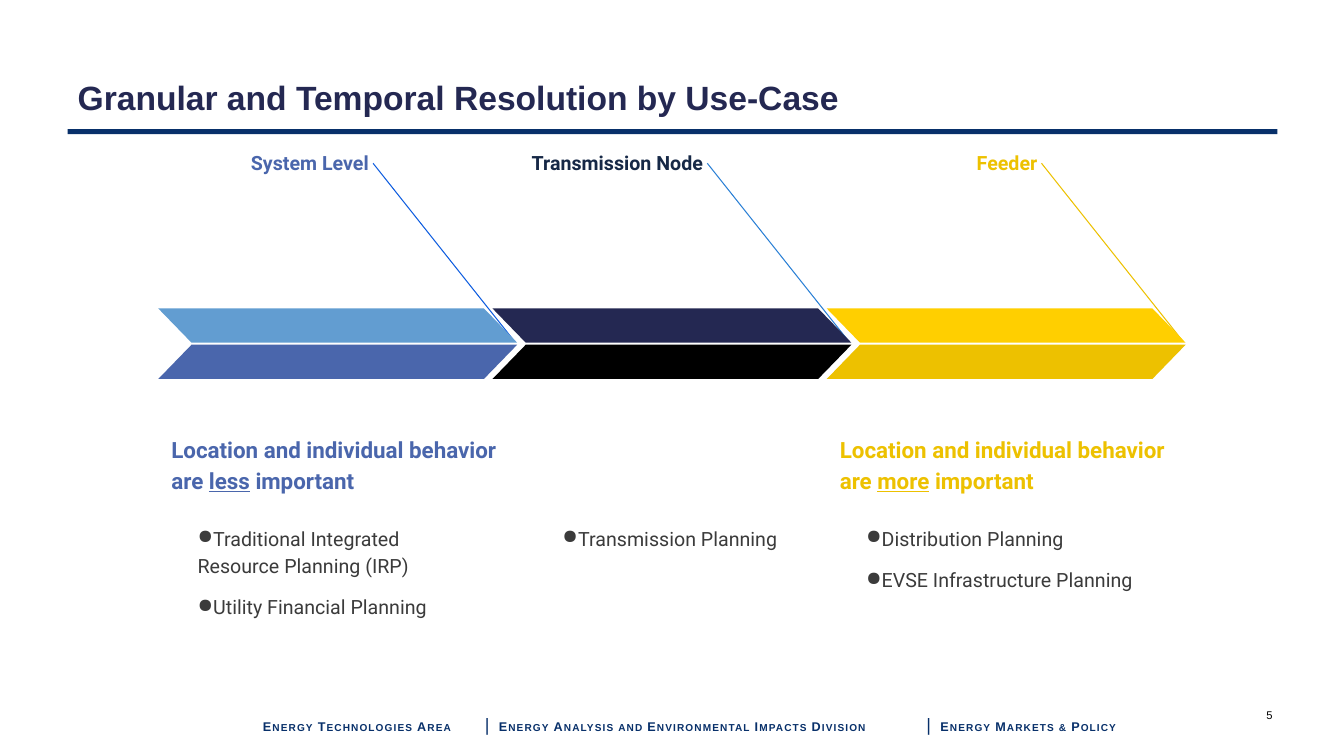
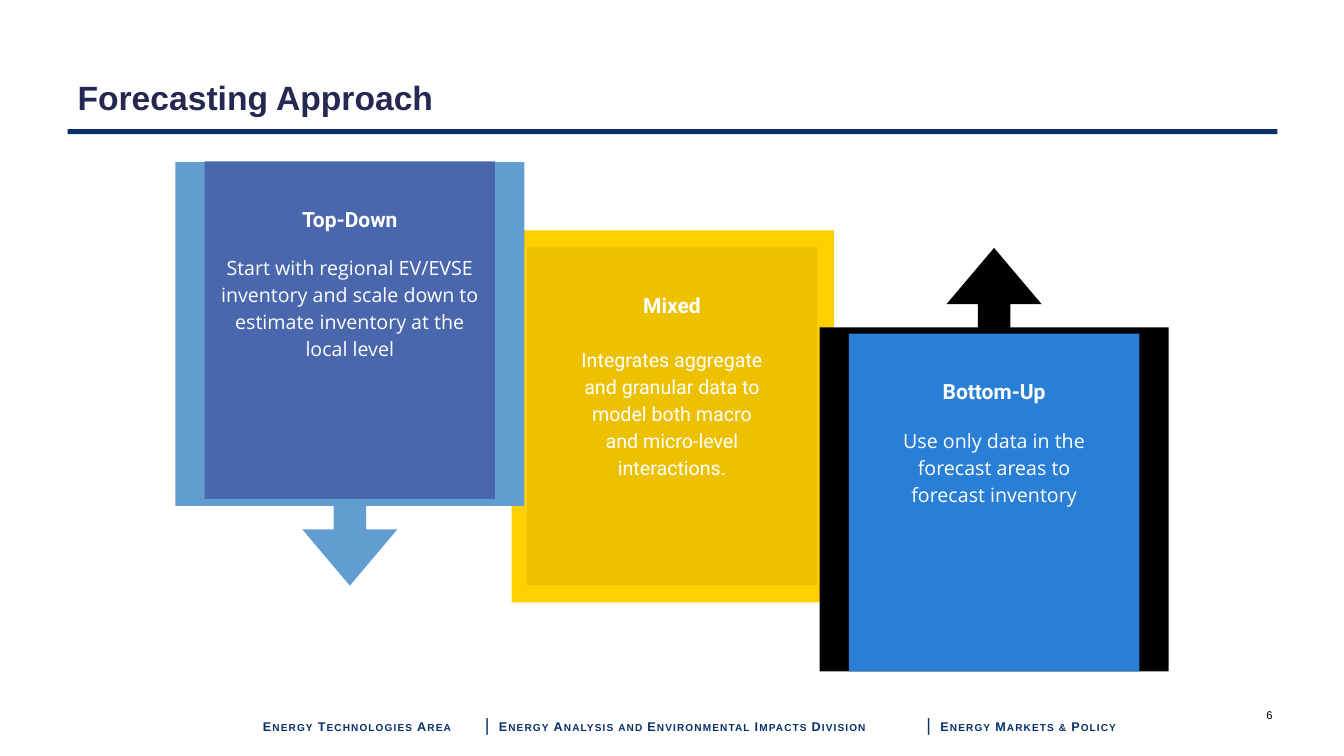
from dataclasses import dataclass

from lxml.etree import SubElement
from pptx import Presentation
from pptx.dml.color import RGBColor
from pptx.enum.shapes import MSO_CONNECTOR, MSO_SHAPE
from pptx.enum.text import MSO_ANCHOR, MSO_AUTO_SIZE, PP_ALIGN
from pptx.oxml.ns import qn
from pptx.util import Inches, Pt


@dataclass(frozen=True)
class Theme:
    band: str = "08306A"
    navy: str = "242852"
    ink: str = "162846"
    body: str = "3B3B3B"
    black: str = "000000"
    white: str = "FFFFFF"
    sky: str = "629DD1"
    indigo: str = "4A66AC"
    azure: str = "297FD5"
    cobalt: str = "0D5CDF"
    yellow: str = "FFCF00"
    gold: str = "EDC100"
    heading_font: str = "Arial"
    body_font: str = "Roboto"
    card_font: str = "Open Sans"
    title_size: float = 24
    headline_size: float = 16
    card_title_size: float = 15
    body_size: float = 14
    footer_size: float = 9
    number_size: float = 8
    line_spacing: float = 1.15
    inset: float = 0.13


@dataclass(frozen=True)
class Box:
    left: float
    top: float
    width: float
    height: float

    def within(self, left, top, width, height):
        """Return a box whose position is given relative to this one."""
        return Box(self.left + left, self.top + top, width, height)

    def lengths(self):
        return [Inches(value) for value in (self.left, self.top, self.width, self.height)]


THEME = Theme()


def add_run(paragraph, text, size, color, font=THEME.body_font, bold=False, underline=None):
    run = paragraph.add_run()
    run.text = text
    run.font.name = font
    run.font.size = Pt(size)
    run.font.bold = bold
    run.font.underline = underline
    run.font.color.rgb = RGBColor.from_string(color)
    return run


def set_frame(shape, anchor=MSO_ANCHOR.TOP, side=THEME.inset, top=THEME.inset):
    frame = shape.text_frame
    frame.word_wrap = True
    frame.auto_size = MSO_AUTO_SIZE.NONE
    frame.vertical_anchor = anchor
    frame.margin_left = frame.margin_right = Inches(side)
    frame.margin_top = frame.margin_bottom = Inches(top)
    return frame


def add_text_box(slide, box, **frame_options):
    shape = slide.shapes.add_textbox(*box.lengths())
    set_frame(shape, **frame_options)
    return shape


def add_filled_shape(slide, kind, box, color, adjustments=()):
    shape = slide.shapes.add_shape(kind, *box.lengths())
    shape.shadow.inherit = False
    shape.fill.solid()
    shape.fill.fore_color.rgb = RGBColor.from_string(color)
    shape.line.fill.background()
    for index, value in enumerate(adjustments):
        shape.adjustments[index] = value
    return shape


def add_band(slide):
    return add_filled_shape(slide, MSO_SHAPE.RECTANGLE, Box(0.67, 1.28, 12, 0.05), THEME.band)


def add_footer(slide):
    shape = add_text_box(slide, Box(2.51, 6.99, 9.3, 0.48), side=0.1, top=0.05)
    paragraph = shape.text_frame.paragraphs[0]
    tabs = SubElement(paragraph._p.get_or_add_pPr(), qn("a:tabLst"))
    for position in (2.2, 2.34, 6.58, 6.72):
        SubElement(tabs, qn("a:tab"), pos=str(Inches(position)), algn="l")
    units = ("Energy Technologies Area", "Energy Analysis and Environmental Impacts Division",
             "Energy Markets & Policy")
    for index, unit in enumerate(units):
        runs = [(unit, THEME.footer_size, True)]
        if index:
            runs.insert(0, ("\t|\t", THEME.headline_size, False))
        for text, size, bold in runs:
            run = add_run(paragraph, text, size, THEME.band, THEME.heading_font, bold)
            run.font._element.set("cap", "small")
            run.font._element.set("spc", "80")
    return shape


def prepare_layout(presentation):
    """Give the title-only layout its title box."""
    layout = presentation.slide_layouts[5]
    title = layout.placeholders[0]
    title.left, title.top, title.width, title.height = Box(0.67, 0.71, 12, 0.5).lengths()
    return layout


def move_to_layout(shapes, layout):
    for shape in shapes:
        layout.shapes.element.append(shape.element)


def add_titled_slide(presentation, layout, title, number):
    slide = presentation.slides.add_slide(layout)
    frame = set_frame(slide.shapes.title, MSO_ANCHOR.BOTTOM, side=0.1, top=0.05)
    frame.paragraphs[0].alignment = PP_ALIGN.LEFT
    add_run(frame.paragraphs[0], title, THEME.title_size, THEME.navy, THEME.heading_font, True)
    number_box = add_text_box(slide, Box(12.22, 6.89, 0.5, 0.4),
                              anchor=MSO_ANCHOR.MIDDLE, side=0.1, top=0.05)
    paragraph = number_box.text_frame.paragraphs[0]
    paragraph.alignment = PP_ALIGN.RIGHT
    add_run(paragraph, str(number), THEME.number_size, THEME.black, THEME.heading_font)
    return slide


def add_stage_label(slide, box, text, color):
    shape = add_text_box(slide, box)
    shape.text_frame.margin_right = Inches(0.04)
    paragraph = shape.text_frame.paragraphs[0]
    paragraph.alignment = PP_ALIGN.RIGHT
    paragraph.line_spacing = THEME.line_spacing
    add_run(paragraph, text, THEME.body_size, color, bold=True)
    return shape


def add_leader(slide, label, end_x, end_y, color):
    """Draw a thin line from the label's right side to the given point."""
    connector = slide.shapes.add_connector(MSO_CONNECTOR.STRAIGHT, 0, 0,
                                           Inches(end_x), Inches(end_y))
    connector.begin_connect(label, 3)
    connector.line.width = Pt(0.75)
    connector.line.color.rgb = RGBColor.from_string(color)
    SubElement(connector.element.spPr, qn("a:effectLst"))


def add_chevron(slide, box, upper_color, lower_color):
    """Stack two mirrored parallelograms into one arrow-like bar."""
    for offset, color in ((0, upper_color), (0.36, lower_color)):
        half = add_filled_shape(slide, MSO_SHAPE.PARALLELOGRAM,
                                box.within(0, offset, box.width, 0.34), color, [0.97])
        if offset == 0:
            half.element.spPr.xfrm.set("flipH", "1")


def add_headline(slide, box, emphasis, color):
    shape = add_text_box(slide, box, anchor=MSO_ANCHOR.BOTTOM)
    paragraph = shape.text_frame.paragraphs[0]
    paragraph.line_spacing = THEME.line_spacing
    for text, underline in (("Location and individual behavior are ", None),
                            (emphasis, True), (" important", None)):
        add_run(paragraph, text, THEME.headline_size, color, bold=True, underline=underline)


def add_bullets(slide, box, items, alignment):
    frame = add_text_box(slide, box).text_frame
    for index, item in enumerate(items):
        paragraph = frame.add_paragraph() if index else frame.paragraphs[0]
        paragraph.alignment = alignment
        paragraph.line_spacing = THEME.line_spacing
        if index:
            paragraph.space_before = Pt(10)
        properties = paragraph._p.get_or_add_pPr()
        properties.set("marL", "0")
        properties.set("indent", str(-Inches(0.1)))
        bullet_color = SubElement(properties, qn("a:buClr"))
        SubElement(bullet_color, qn("a:srgbClr"), val=THEME.body)
        SubElement(properties, qn("a:buChar"), char="●")
        add_run(paragraph, item, THEME.body_size, THEME.body)


@dataclass(frozen=True)
class Stage:
    label: str
    label_color: str
    leader_color: str
    upper_color: str
    lower_color: str
    emphasis: str
    items: tuple
    alignment: PP_ALIGN = PP_ALIGN.LEFT


STAGES = (
    Stage("System Level", THEME.indigo, THEME.cobalt, THEME.sky, THEME.indigo, "less",
          ("Traditional Integrated Resource Planning (IRP)", "Utility Financial Planning")),
    Stage("Transmission Node", THEME.ink, THEME.azure, THEME.navy, THEME.black, "",
          ("Transmission Planning",), PP_ALIGN.CENTER),
    Stage("Feeder", THEME.gold, THEME.gold, THEME.yellow, THEME.gold, "more",
          ("Distribution Planning", "EVSE Infrastructure Planning")),
)


def add_stage(slide, box, stage):
    label = add_stage_label(slide, box.within(0, 0, 2.13, 0.58), stage.label, stage.label_color)
    add_leader(slide, label, box.left + 3.52, box.top + 2.04, stage.leader_color)
    add_chevron(slide, box.within(0, 1.73, box.width, 0.7), stage.upper_color, stage.lower_color)
    if stage.emphasis:
        add_headline(slide, box.within(0, 2.65, box.width, 1.05), stage.emphasis,
                     stage.lower_color)
    add_bullets(slide, box.within(0.26, 3.73, 3, 1.74), stage.items, stage.alignment)


def fill_resolution_slide(slide):
    for index, stage in enumerate(STAGES):
        add_stage(slide, Box(1.57 + 3.315 * index, 1.33, 3.56, 5.47), stage)


@dataclass(frozen=True)
class Card:
    column: int
    title: str
    text: str
    frame_kind: MSO_SHAPE
    frame_offset: tuple
    frame_color: str
    panel_color: str
    side: float = 0.5
    gap: float = 15
    font: str = THEME.card_font


CALLOUT_ADJUSTMENTS = (0.093, 0.136, 0.161, 0.812)
CARDS = (
    Card(1, "Mixed",
         "Integrates aggregate and granular data to model both macro and micro-level interactions.",
         MSO_SHAPE.RECTANGLE, (-0.15, -0.17, 3.2, 3.69), THEME.yellow, THEME.gold,
         gap=19, font=THEME.body_font),
    Card(0, "Top-Down",
         "Start with regional EV/EVSE inventory and scale down to estimate inventory "
         "at the local level",
         MSO_SHAPE.DOWN_ARROW_CALLOUT, (-0.29, 0.01, 3.46, 4.2), THEME.sky, THEME.indigo,
         side=THEME.inset),
    Card(2, "Bottom-Up", "Use only data in the forecast areas to forecast inventory",
         MSO_SHAPE.UP_ARROW_CALLOUT, (-0.29, -0.85, 3.46, 4.2), THEME.black, THEME.azure),
)


def add_card(slide, box, card):
    adjustments = () if card.frame_kind == MSO_SHAPE.RECTANGLE else CALLOUT_ADJUSTMENTS
    add_filled_shape(slide, card.frame_kind, box.within(*card.frame_offset),
                     card.frame_color, adjustments)
    panel = add_filled_shape(slide, MSO_SHAPE.RECTANGLE, box, card.panel_color)
    frame = set_frame(panel, side=card.side, top=0.41)
    heading, description = frame.paragraphs[0], frame.add_paragraph()
    for paragraph in (heading, description):
        paragraph.alignment = PP_ALIGN.CENTER
        paragraph.line_spacing = THEME.line_spacing
    description.space_before = Pt(card.gap)
    add_run(heading, card.title, THEME.card_title_size, THEME.white, bold=True)
    add_run(description, card.text, THEME.body_size, THEME.white, card.font)


def fill_approach_slide(slide):
    for card in CARDS:
        box = Box(2.03 + 3.195 * card.column, 1.6 + 0.855 * card.column, 2.88, 3.35)
        add_card(slide, box, card)


def main():
    presentation = Presentation()
    presentation.slide_width, presentation.slide_height = Inches(13.33), Inches(7.5)
    layout = prepare_layout(presentation)
    resolution = add_titled_slide(presentation, layout,
                                  "Granular and Temporal Resolution by Use-Case", 5)
    move_to_layout([add_band(resolution), add_footer(resolution)], layout)
    fill_resolution_slide(resolution)
    fill_approach_slide(add_titled_slide(presentation, layout, "Forecasting Approach", 6))
    presentation.save("out.pptx")


if __name__ == "__main__":
    main()
